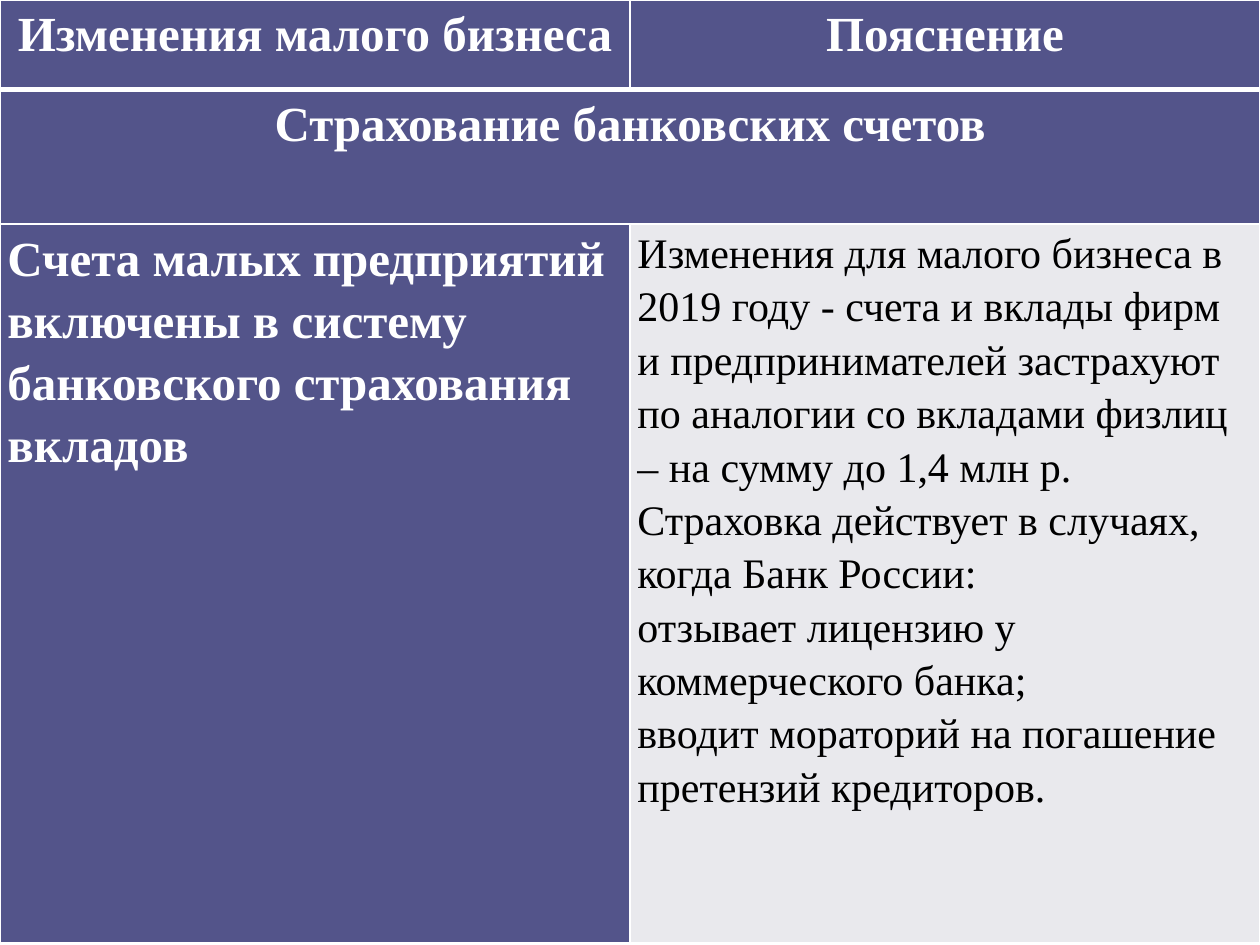
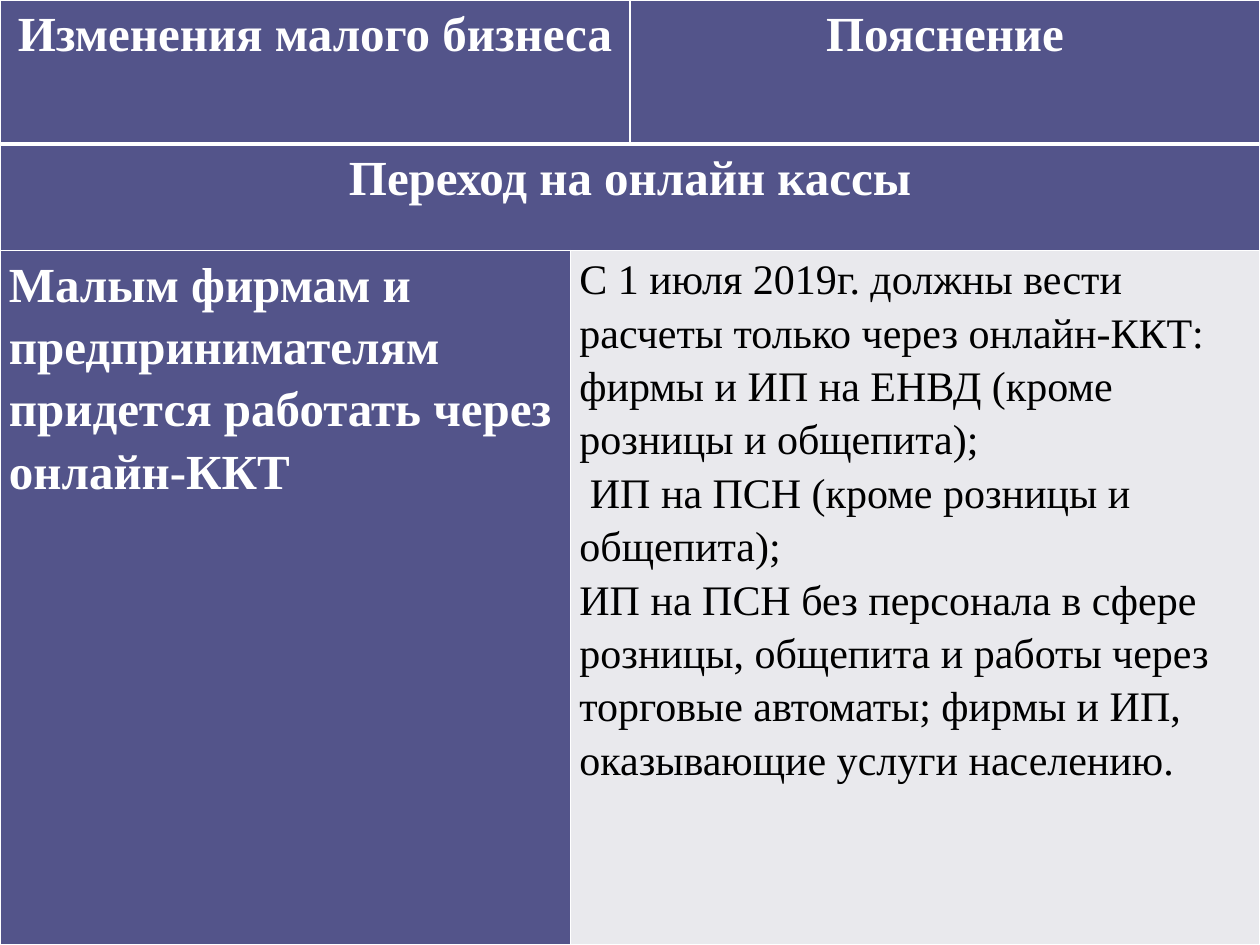
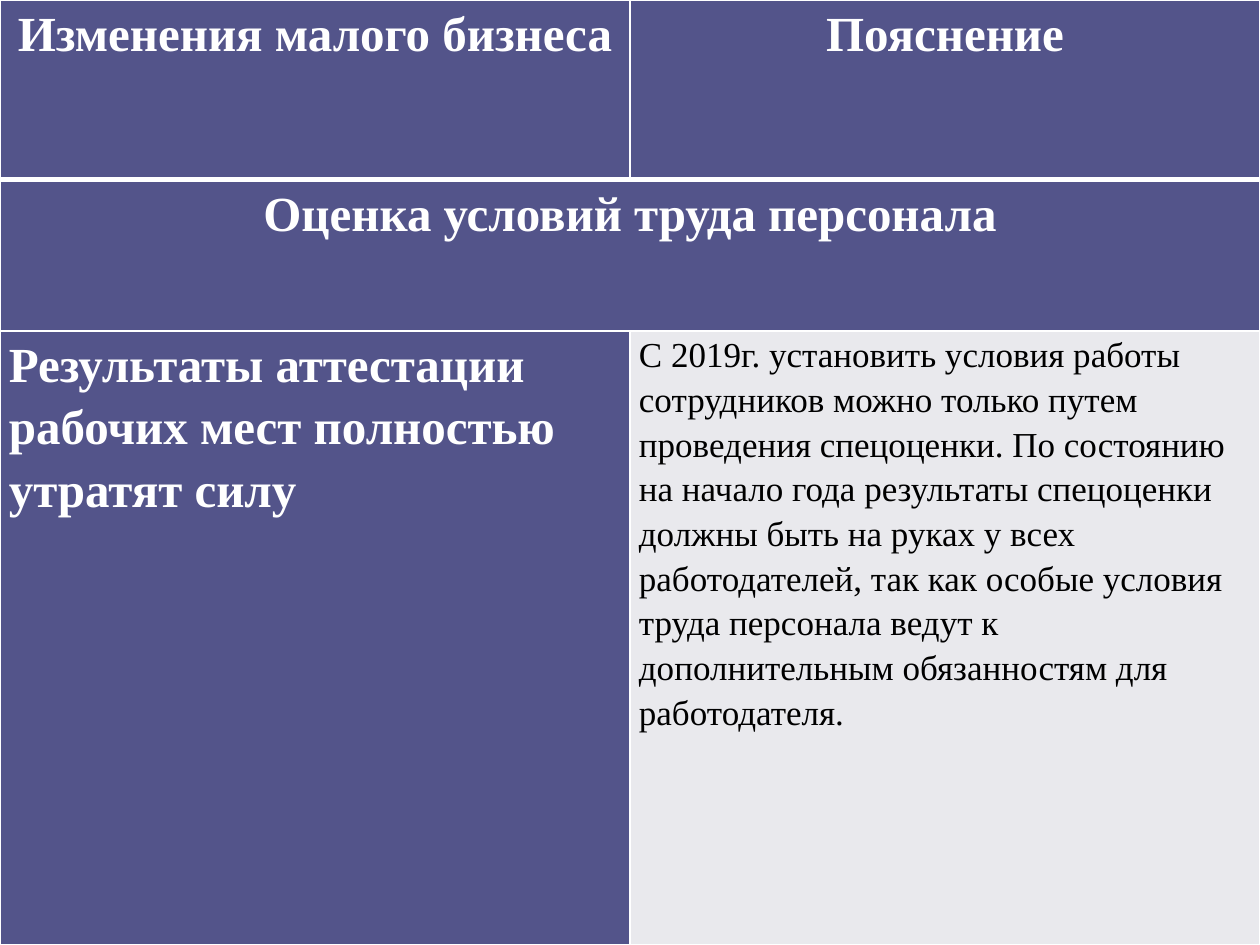
from dataclasses import dataclass

from lxml.etree import SubElement
from pptx import Presentation
from pptx.dml.color import RGBColor as RGB
from pptx.enum.text import MSO_ANCHOR as Anchor, PP_ALIGN as Align
from pptx.oxml.ns import qn
from pptx.util import Cm, Pt


@dataclass(frozen=True)
class Theme:
    font: str = "Times New Roman"
    dark: RGB = RGB(0x53, 0x54, 0x8A)
    pale: RGB = RGB(0xE9, 0xE9, 0xED)
    white: RGB = RGB(0xFF, 0xFF, 0xFF)
    black: RGB = RGB(0, 0, 0)
    head_size: int = 28
    body_size: int = 24
    small_size: int = 20
    spacing: float = 1.15
    rule: int = 1
    head_rule: int = 3


T = Theme()
WIDTH, HEIGHT = 25.4, 19.05
HALF = WIDTH / 2
HEADINGS = ("Изменения малого бизнеса", "Пояснение")


def write(tf, lines, size=T.head_size, color=T.white, bold=True, align=Align.LEFT):
    """Fill a text frame with one paragraph per line."""
    for i, line in enumerate(lines):
        p = tf.paragraphs[0] if i == 0 else tf.add_paragraph()
        p.alignment, p.line_spacing = align, T.spacing
        r = p.add_run()
        r.text = line
        r.font.name, r.font.size, r.font.bold = T.font, Pt(size), bold
        r.font.color.rgb = color


def add_border(cell, side, width):
    """Draw one side (L, R, T or B) of a cell in white."""
    ln = SubElement(cell._tc.get_or_add_tcPr(), qn(f"a:ln{side}"), w=str(Pt(width)))
    fill = SubElement(ln, qn("a:solidFill"))
    SubElement(fill, qn("a:srgbClr"), val=str(T.white))


def style_cell(cell, row, fill, inset):
    """Set the rules, fill and margins of a cell."""
    for side in "LRTB":
        under_head = (row, side) in ((0, "B"), (1, "T"))
        add_border(cell, side, T.head_rule if under_head else T.rule)
    cell.fill.solid()
    cell.fill.fore_color.rgb = fill
    cell.margin_left = cell.margin_right = Cm(inset)
    cell.margin_top = cell.margin_bottom = 0
    cell.vertical_anchor = Anchor.TOP


def add_changes_table(s, topic, change, notes, head_h, topic_h, height=HEIGHT,
                      inset=0.18, change_w=HALF, note_size=T.body_size):
    """Headings, a topic across the table, then the change and its notes."""
    # An extra column lets the last row divide to the left of the headings
    cols = [HALF, HALF] if change_w == HALF else [change_w, HALF - change_w, HALF]
    rows = [head_h, topic_h, height - head_h - topic_h]
    last = len(cols) - 1
    table = s.shapes.add_table(len(rows), len(cols), 0, 0, Cm(WIDTH), Cm(height)).table
    for col, w in zip(table.columns, cols):
        col.width = Cm(w)
    for row, h in zip(table.rows, rows):
        row.height = Cm(h)

    for i in range(len(rows)):
        for j in range(len(cols)):
            fill = T.pale if i == 2 and j > 0 else T.dark
            style_cell(table.cell(i, j), i, fill, inset)

    # Merged cells
    table.cell(1, 0).merge(table.cell(1, last))
    if last > 1:
        table.cell(0, 0).merge(table.cell(0, last - 1))
        table.cell(2, 1).merge(table.cell(2, last))

    # Text
    for j, heading in zip((0, last), HEADINGS):
        write(table.cell(0, j).text_frame, [heading], align=Align.CENTER)
    write(table.cell(1, 0).text_frame, [topic], align=Align.CENTER)
    write(table.cell(2, 0).text_frame, [change])
    write(table.cell(2, 1).text_frame, notes, size=note_size, color=T.black, bold=False)


def main():
    prs = Presentation()
    prs.slide_width, prs.slide_height = Cm(WIDTH), Cm(HEIGHT)
    blank = prs.slide_layouts[6]

    # Insurance of bank accounts
    add_changes_table(
        prs.slides.add_slide(blank),
        "Страхование банковских счетов",
        "Счета малых предприятий включены в систему банковского страхования вкладов",
        ["Изменения для малого бизнеса в 2019 году - счета и вклады фирм и "
         "предпринимателей застрахуют по аналогии со вкладами физлиц – на сумму "
         "до 1,4 млн р. Страховка действует в случаях, когда Банк России:",
         "отзывает лицензию у коммерческого банка;",
         "вводит мораторий на погашение претензий кредиторов."],
        head_h=1.8, topic_h=2.72, height=19, inset=0.15)

    # Online cash registers
    add_changes_table(
        prs.slides.add_slide(blank),
        "Переход на онлайн кассы",
        "Малым фирмам и предпринимателям придется работать через онлайн-ККТ",
        ["С 1 июля 2019г. должны вести расчеты только через онлайн-ККТ:",
         "фирмы и ИП на ЕНВД (кроме розницы и общепита);",
         " ИП на ПСН (кроме розницы и общепита);",
         "ИП на ПСН без персонала в сфере розницы, общепита и работы через "
         "торговые автоматы; фирмы и ИП, оказывающие услуги населению."],
        head_h=2.9, topic_h=2.15, change_w=11.5)

    # Assessment of working conditions
    add_changes_table(
        prs.slides.add_slide(blank),
        "Оценка условий труда персонала",
        "Результаты аттестации рабочих мест полностью утратят силу",
        ["С 2019г. установить условия работы сотрудников можно только путем "
         "проведения спецоценки. По состоянию на начало года результаты "
         "спецоценки должны быть на руках у всех работодателей, так как особые "
         "условия труда персонала ведут к дополнительным обязанностям для "
         "работодателя."],
        head_h=3.62, topic_h=3.05, note_size=T.small_size)

    prs.save("out.pptx")


if __name__ == "__main__":
    main()
